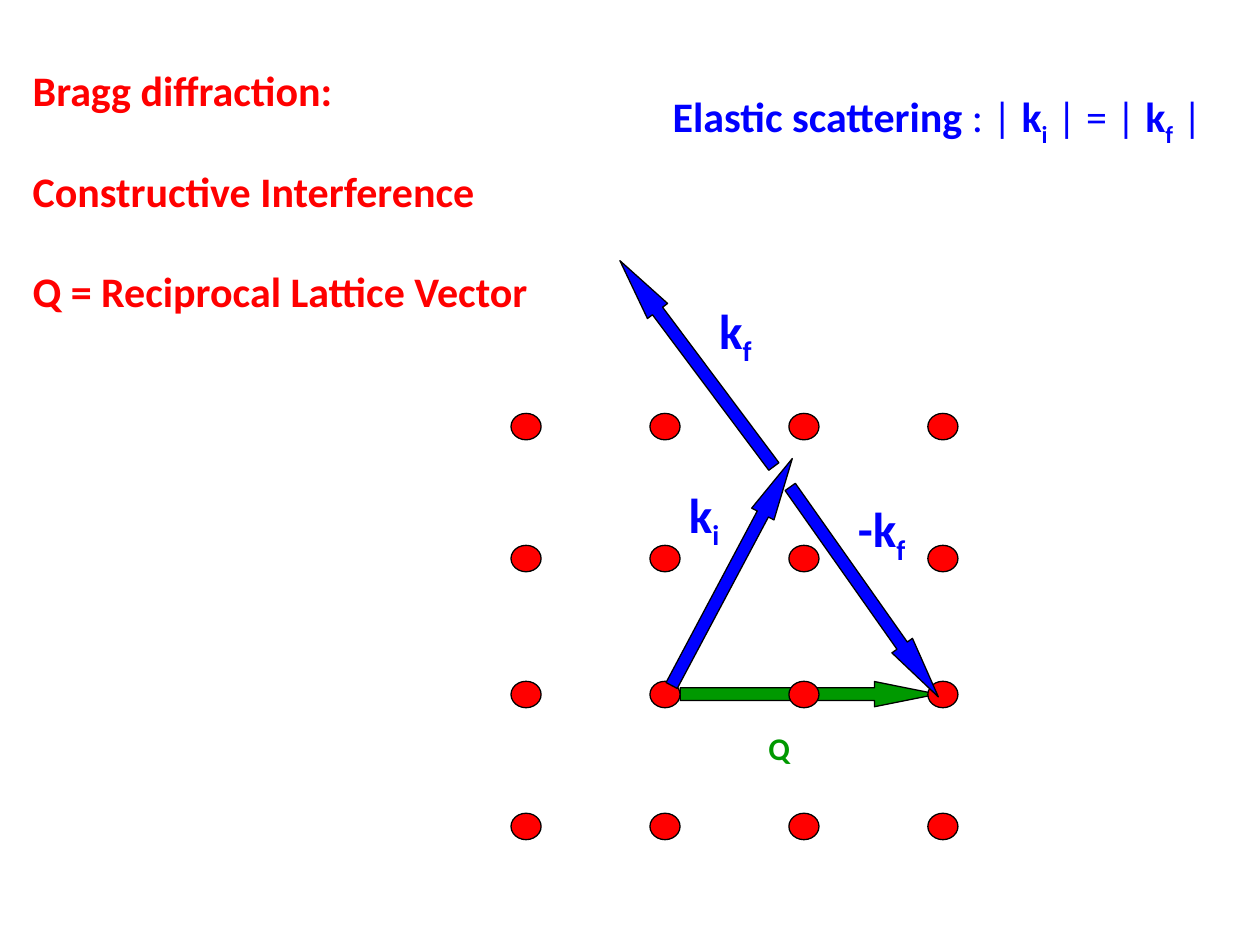
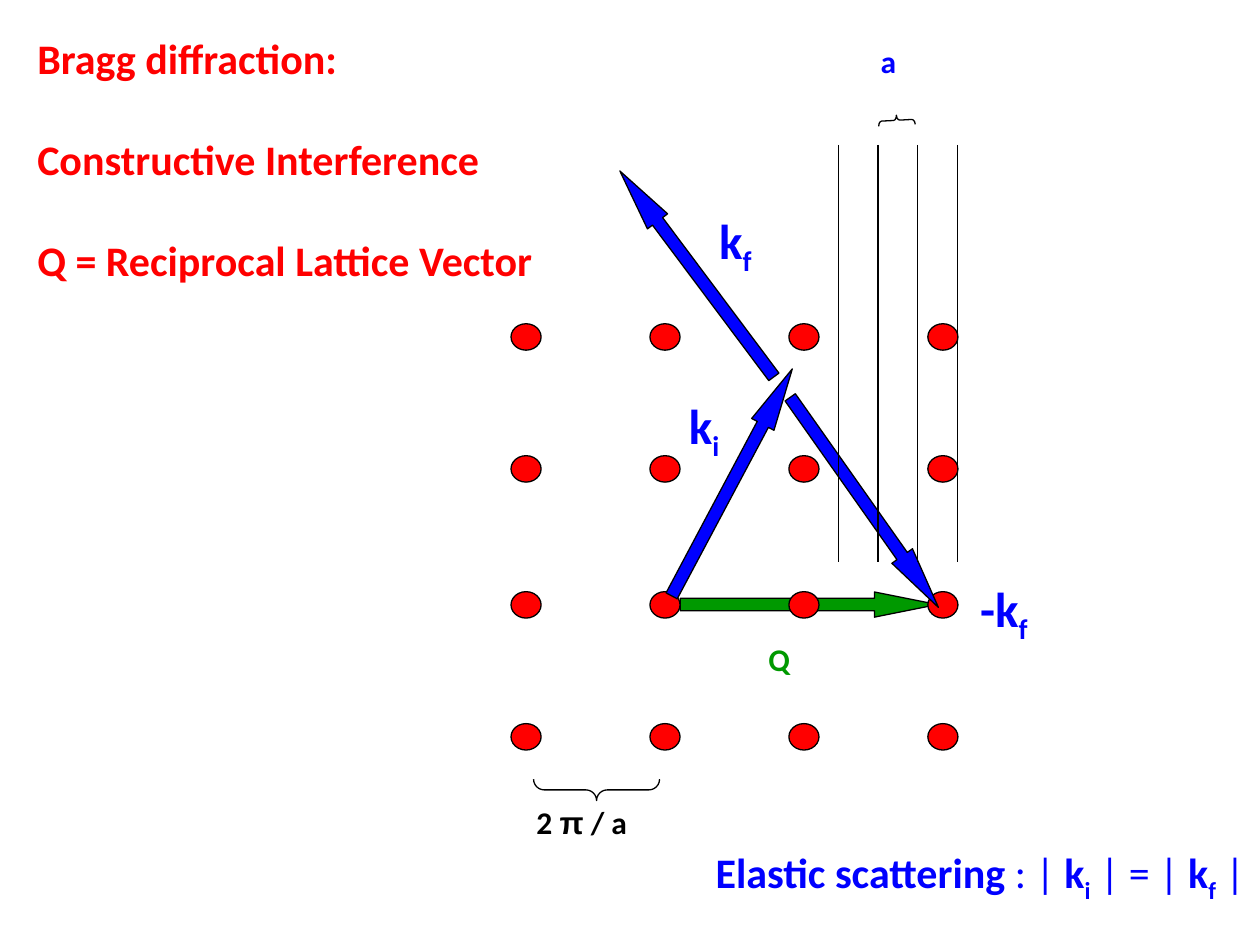
from lxml import etree
from pptx import Presentation
from pptx.dml.color import RGBColor
from pptx.enum import shapes, text
from pptx.oxml.ns import qn
from pptx.util import Pt

COLORS = {"red": "FF0000", "blue": "0000FF", "green": "009900", "black": "000000"}
FONT = "Calibri"
BODY_SIZE, VECTOR_SIZE, LABEL_SIZE = 24, 28, 18

DOT_SIZE = (17.2, 15.1)
DOT_LEFT, DOT_PITCH, DOT_COLUMNS = 292, 79.4, 4
DOT_ROWS = (0, 75.4, 153.1, 228.5)
ARROW_SIZE = (14.4, 146.9)

SUBSCRIPT = {"subscript": True}
PLAIN = {"bold": False}
K_INITIAL = [("k", {}), ("i", SUBSCRIPT)]
K_FINAL = [("k", {}), ("f", SUBSCRIPT)]
MINUS_K_FINAL = [("-k", {}), ("f", SUBSCRIPT)]
ELASTIC = [
    ("Elastic scattering", {}), (" : | ", PLAIN), *K_INITIAL,
    (" | = | ", PLAIN), *K_FINAL, (" |", PLAIN),
]
LATTICE_SPACING = [("2 ", {}), ("π", {"name": "Arial"}), (" / a", {})]


def rgb(color):
    return RGBColor.from_string(COLORS[color])


def write_runs(paragraph, runs, size, color):
    """Fill a paragraph with (words, format) runs in the shared bold style."""
    paragraph.alignment = text.PP_ALIGN.LEFT
    for words, changes in runs:
        run = paragraph.add_run()
        run.text = words
        style = {"name": FONT, "size": Pt(size), "bold": True, **changes}
        if style.pop("subscript", False):
            run._r.get_or_add_rPr().set("baseline", "-25000")
        for attribute, value in style.items():
            setattr(run.font, attribute, value)
        run.font.color.rgb = rgb(color)


def add_label(slide, left, top, width, height, paragraphs, size, color):
    box = slide.shapes.add_textbox(Pt(left), Pt(top), Pt(width), Pt(height))
    frame = box.text_frame
    frame.word_wrap = False
    frame.auto_size = text.MSO_AUTO_SIZE.SHAPE_TO_FIT_TEXT
    for index, runs in enumerate(paragraphs):
        paragraph = frame.add_paragraph() if index else frame.paragraphs[0]
        if index:
            paragraph.space_before = Pt(28.5)
        write_runs(paragraph, runs, size, color)


def add_heading(slide, left, top):
    """Place the title and, below it, the two statements in the same style."""
    title = slide.shapes.title
    box = {"left": left, "top": top, "width": 300, "height": 36.3}
    for attribute, value in box.items():
        setattr(title, attribute, Pt(value))
    frame = title.text_frame
    frame.auto_size = text.MSO_AUTO_SIZE.NONE
    frame.vertical_anchor = text.MSO_ANCHOR.TOP
    write_runs(frame.paragraphs[0], [("Bragg diffraction:", {})], BODY_SIZE, "red")
    statements = ("Constructive Interference", "Q = Reciprocal Lattice Vector")
    add_label(slide, left, top + 57.8, 300, 94.6,
              [[(words, {})] for words in statements], BODY_SIZE, "red")


def add_outlined(slide, kind, left, top, size, fill=None, rotation=0, adjustments=()):
    """Add a preset shape with a thin black outline."""
    width, height = size
    shape = slide.shapes.add_shape(kind, Pt(left), Pt(top), Pt(width), Pt(height))
    shape.shadow.inherit = False
    shape.rotation = rotation
    for index, value in enumerate(adjustments):
        shape.adjustments[index] = value
    if fill:
        shape.fill.solid()
        shape.fill.fore_color.rgb = rgb(fill)
    else:
        shape.fill.background()
    shape.line.color.rgb = rgb("black")
    shape.line.width = Pt(0.75)


def add_vector(slide, left, top, rotation, color):
    add_outlined(slide, shapes.MSO_SHAPE.DOWN_ARROW, left, top, ARROW_SIZE,
                 color, rotation, (0.5, 2.494))


def add_brace(slide, left, top, size, rotation, curl):
    add_outlined(slide, shapes.MSO_SHAPE.RIGHT_BRACE, left, top, size,
                 rotation=rotation, adjustments=(curl, 0.5))


def add_plane(slide, x, top, bottom):
    """Draw one lattice plane as a vertical line."""
    line = slide.shapes.add_connector(
        shapes.MSO_CONNECTOR.STRAIGHT, Pt(x), Pt(top), Pt(x), Pt(bottom))
    line.line.color.rgb = rgb("black")
    line.line.width = Pt(0.75)
    etree.SubElement(line._element.spPr, qn("a:effectLst"))


def add_vector_label(slide, left, top, width, runs):
    add_label(slide, left, top, width, 41, [runs], VECTOR_SIZE, "blue")


def add_lattice(slide, top):
    """Draw the reciprocal lattice and its vectors; top is the first dot row."""
    add_vector(slide, 455, top + 87, 270, "green")
    for row in DOT_ROWS:
        for column in range(DOT_COLUMNS):
            add_outlined(slide, shapes.MSO_SHAPE.OVAL, DOT_LEFT + column * DOT_PITCH,
                         top + row, DOT_SIZE, "red")
    for left, offset, rotation in ((411.1, 17.2, 208), (486.7, 28.6, 324.8),
                                   (391, -101.9, 143.2)):
        add_vector(slide, left, top + offset, rotation, "blue")
    add_label(slide, 432, top + 177, 33, 36, [[("Q", {})]], LABEL_SIZE, "green")
    add_vector_label(slide, 386.6, top + 37.2, 36, K_INITIAL)
    add_vector_label(slide, 403.9, top - 68.2, 37, K_FINAL)


def add_bragg_slide(presentation, heading, lattice_top, minus_k_final, elastic):
    slide = presentation.slides.add_slide(presentation.slide_layouts[5])
    add_heading(slide, *heading)
    add_lattice(slide, lattice_top)
    add_vector_label(slide, *minus_k_final, 48, MINUS_K_FINAL)
    add_label(slide, *elastic, 322, 36, [ELASTIC], BODY_SIZE, "blue")
    return slide


def add_spacings(slide):
    """Mark the reciprocal spacing and the planes of the real lattice."""
    add_brace(slide, 334.8, 415.4, (12.2, 72), 90, 0.5)
    add_label(slide, 299.5, 455.3, 76.3, 36, [LATTICE_SPACING], LABEL_SIZE, "black")
    for index in range(4):
        add_plane(slide, 479 + index * 22.7, 82.8, 321)
    add_brace(slide, 509.5, 58.3, (5.8, 20.9), 266.8, 0.31)
    add_label(slide, 496.1, 20.2, 26.6, 36, [[("a", {})]], LABEL_SIZE, "blue")


def main():
    presentation = Presentation()
    presentation.slide_width, presentation.slide_height = Pt(720), Pt(540)
    add_bragg_slide(presentation, heading=(11.5, 33.1), lattice_top=236.2,
                    minus_k_final=(483.1, 281.5), elastic=(377.3, 48.2))
    spacing_slide = add_bragg_slide(
        presentation, heading=(14.2, 15.1), lattice_top=185,
        minus_k_final=(553, 326.9), elastic=(401.8, 480.2))
    add_spacings(spacing_slide)
    presentation.save("out.pptx")


if __name__ == "__main__":
    main()
